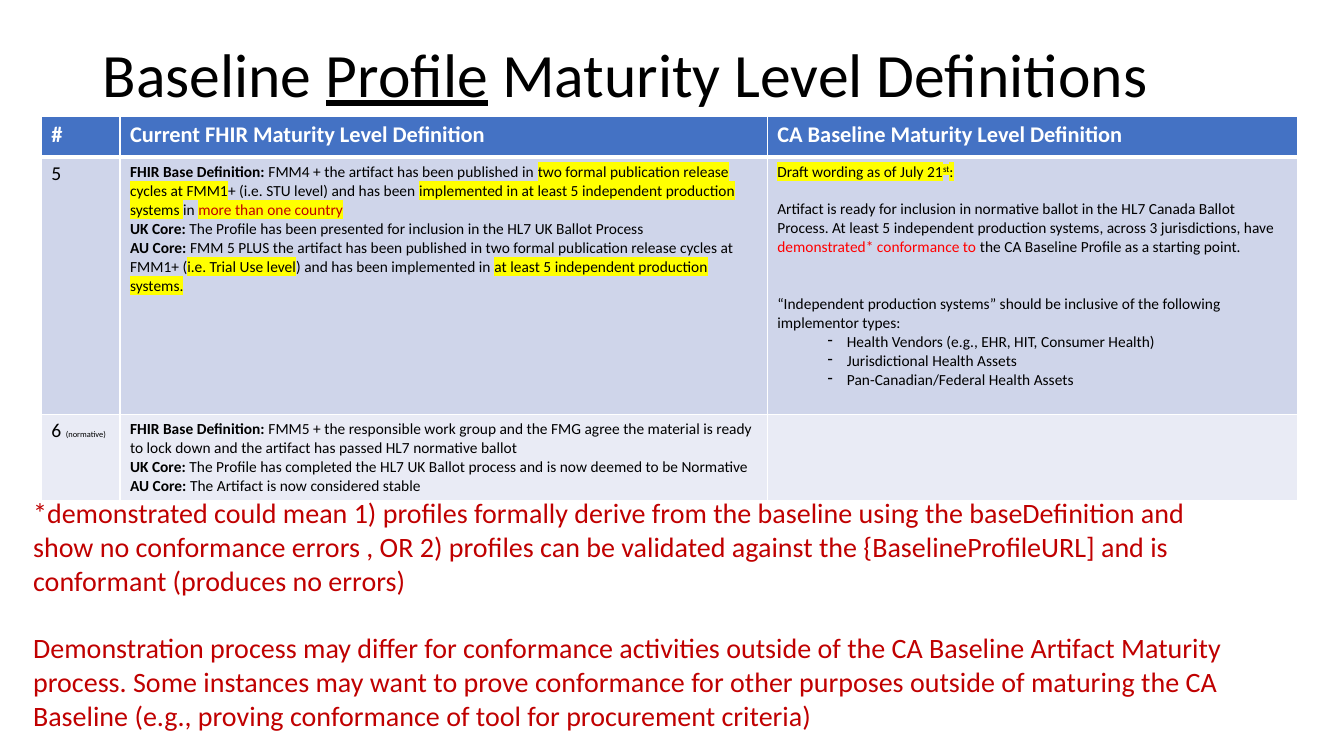
from lxml import etree
from pptx import Presentation
from pptx.dml.color import RGBColor
from pptx.enum.text import MSO_ANCHOR, MSO_AUTO_SIZE
from pptx.oxml.ns import qn
from pptx.util import Inches, Pt

MIDDLE = MSO_ANCHOR.MIDDLE
GROW = MSO_AUTO_SIZE.SHAPE_TO_FIT_TEXT
FONT = "Calibri"
COLORS = {
    "black": "000000", "white": "FFFFFF", "note": "C00000", "red": "FF0000",
    "yellow": "FFFF00", "header": "4472C4", "odd": "CFD5EA", "even": "E9EBF5",
}
LINE_GAP = 13.4  # points in one line of 11 pt text
BOLD = {"bold": True}
MARK = {"mark": True}

HEADERS = ["#", "Current FHIR Maturity Level Definition",
           "CA Baseline Maturity Level Definition"]
COLUMN_WIDTHS = [0.78, 6.42, 5.26]
ROW_HEIGHTS = [0.41, 2.55, 0.86]

LEVEL_5_CURRENT = [
    [("FHIR Base Definition: ", BOLD),
     ("FMM4 + the artifact has been published in ", {}),
     ("two formal publication release cycles at FMM1", MARK),
     ("+ (i.e. STU level) and has been ", {}),
     ("implemented in at least 5 independent production systems ", MARK),
     ("in ", {}),
     ("more than one country", {"mark": True, "color": "note"})],
    [("UK Core: ", BOLD),
     ("The Profile has been presented for inclusion in the HL7 UK Ballot Process", {})],
    [("AU Core: ", BOLD),
     ("FMM 5 PLUS the artifact has been published in two formal publication "
      "release cycles at FMM1+ (", {}),
     ("i.e. Trial Use level", MARK),
     (") and has been implemented in ", {}),
     ("at least 5 independent production systems.", MARK)],
]
LEVEL_5_BASELINE = [
    [("Draft wording as of July 21", MARK),
     ("st", {"mark": True, "raised": True}),
     (":", MARK)],
    [("Artifact is ready for inclusion in normative ballot in the HL7 Canada Ballot "
      "Process. At least 5 independent production systems, across 3 jurisdictions, have ", {}),
     ("demonstrated* conformance to ", {"color": "red"}),
     ("the CA Baseline Profile as a starting point.", {})],
    [("“Independent production systems” should be inclusive of the following "
      "implementor types:", {})],
]
IMPLEMENTORS = ["Health Vendors (e.g., EHR, HIT, Consumer Health)",
                "Jurisdictional Health Assets",
                "Pan-Canadian/Federal Health Assets"]
LEVEL_6_CURRENT = [
    [("FHIR Base Definition: ", BOLD),
     ("FMM5 + the responsible work group and the FMG agree the material is ready to "
      "lock down and the artifact has passed HL7 normative ballot", {})],
    [("UK Core: ", BOLD),
     ("The Profile has completed the HL7 UK Ballot process and is now deemed to be "
      "Normative", {})],
    [("AU Core: ", BOLD), ("The Artifact is now considered stable", {})],
]
NOTES = [
    "*demonstrated could mean 1) profiles formally derive from the baseline using the "
    "baseDefinition and show no conformance errors , OR 2) profiles can be validated "
    "against the {BaselineProfileURL] and is conformant (produces no errors)",
    "Demonstration process may differ for conformance activities outside of the CA "
    "Baseline Artifact Maturity process. Some instances may want to prove conformance "
    "for other purposes outside of maturing the CA Baseline (e.g., proving conformance "
    "of tool for procurement criteria)",
]


def rgb(name):
    return RGBColor.from_string(COLORS[name])


def add_span(para, text, bold=None, mark=False, color=None, raised=False,
             underline=None, size=None):
    span = para.add_run()
    span.text = text
    font = span.font
    font.bold = bold
    font.underline = underline
    if size:
        font.size = Pt(size)
    if color:
        font.color.rgb = rgb(color)
    properties = font._element
    if raised:
        properties.set("baseline", "30000")
    if mark:
        highlight = etree.SubElement(properties, qn("a:highlight"))
        etree.SubElement(highlight, qn("a:srgbClr"), val=COLORS["yellow"])


def write(frame, paragraphs, size, color="black", bold=False, gaps=()):
    """Fill a frame with lists of (text, style) spans; gaps are points before each."""
    for index, spans in enumerate(paragraphs):
        para = frame.paragraphs[0] if index == 0 else frame.add_paragraph()
        para.font.name = FONT
        para.font.size = Pt(size)
        para.font.bold = bold
        para.font.color.rgb = rgb(color)
        if gaps:
            para.space_before = Pt(gaps[index])
        for text, style in spans:
            add_span(para, text, **style)


def add_dash(para):
    properties = para._p.get_or_add_pPr()
    properties.set("marL", str(Inches(0.69)))
    properties.set("indent", str(Inches(-0.19)))
    bullet = etree.Element(qn("a:buChar"), char="-")
    properties.insert_element_before(bullet, "a:tabLst", "a:defRPr", "a:extLst")


def style_cell(cell, fill, bottom_width):
    properties = cell._tc.get_or_add_tcPr()
    for side, width in (("L", 1), ("R", 1), ("T", 1), ("B", bottom_width)):
        border = etree.SubElement(properties, qn(f"a:ln{side}"), w=str(Pt(width)))
        solid = etree.SubElement(border, qn("a:solidFill"))
        etree.SubElement(solid, qn("a:srgbClr"), val=COLORS["white"])
    cell.fill.solid()
    cell.fill.fore_color.rgb = rgb(fill)


def add_text_box(page, left, top, width, height):
    box = page.shapes.add_textbox(Inches(left), Inches(top), Inches(width), Inches(height))
    box.text_frame.word_wrap = True
    return box.text_frame


def add_title(page):
    frame = add_text_box(page, 0.92, 0.04, 11.5, 1.45)
    frame.vertical_anchor = MIDDLE
    write(frame, [[("Baseline ", {}), ("Profile", {"underline": True}),
                   (" Maturity Level Definitions", {})]], 44)
    frame.paragraphs[0].line_spacing = 0.9


def add_maturity_table(page):
    table = page.shapes.add_table(
        len(ROW_HEIGHTS), len(COLUMN_WIDTHS), Inches(0.41), Inches(1.15),
        Inches(sum(COLUMN_WIDTHS)), Inches(sum(ROW_HEIGHTS))).table
    for column, width in zip(table.columns, COLUMN_WIDTHS):
        column.width = Inches(width)
    for row, height, fill in zip(table.rows, ROW_HEIGHTS, ("header", "odd", "even")):
        row.height = Inches(height)
        for cell in row.cells:
            style_cell(cell, fill, 3 if fill == "header" else 1)

    for column, header in enumerate(HEADERS):
        write(table.cell(0, column).text_frame, [[(header, {})]], 16, "white", True)
    write(table.cell(1, 0).text_frame, [[("5", {})]], 14)
    write(table.cell(2, 0).text_frame, [[("6 ", {}), ("(normative)", {"size": 6})]], 14)
    write(table.cell(1, 1).text_frame, LEVEL_5_CURRENT, 11)
    write(table.cell(2, 1).text_frame, LEVEL_6_CURRENT, 11)

    baseline = table.cell(1, 2).text_frame
    bullets = [[(name, {})] for name in IMPLEMENTORS]
    write(baseline, LEVEL_5_BASELINE + bullets, 11,
          gaps=[0, LINE_GAP, 2 * LINE_GAP] + [0] * len(bullets))
    for para in baseline.paragraphs[len(LEVEL_5_BASELINE):]:
        para.level = 1
        add_dash(para)


def add_notes(page):
    frame = add_text_box(page, 0.23, 4.87, 12.01, 3.13)
    frame.auto_size = GROW
    write(frame, [[(note, {})] for note in NOTES], 20, "note", gaps=[0, 24.4])


def main():
    deck = Presentation()
    deck.slide_width = Inches(13.33)
    deck.slide_height = Inches(7.5)
    page = deck.slides.add_slide(deck.slide_layouts[6])
    add_title(page)
    add_maturity_table(page)
    add_notes(page)
    deck.save("out.pptx")


if __name__ == "__main__":
    main()
